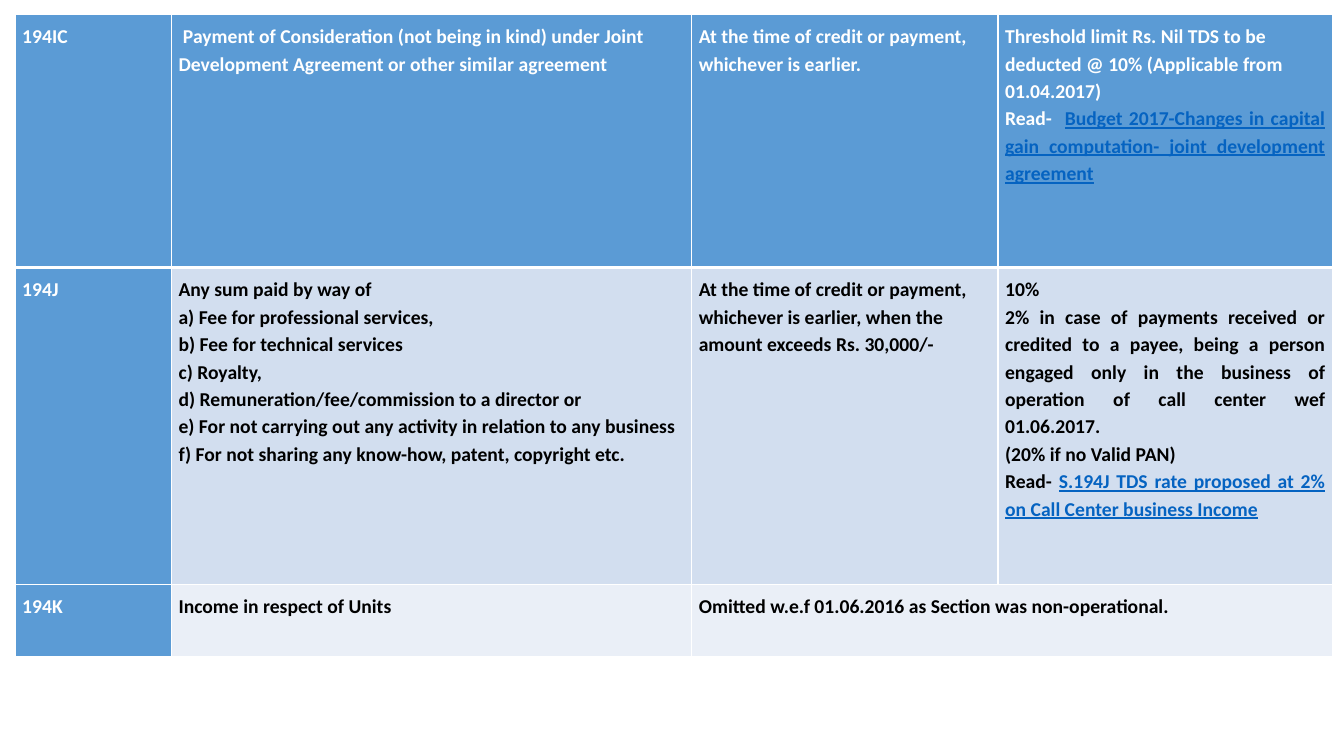
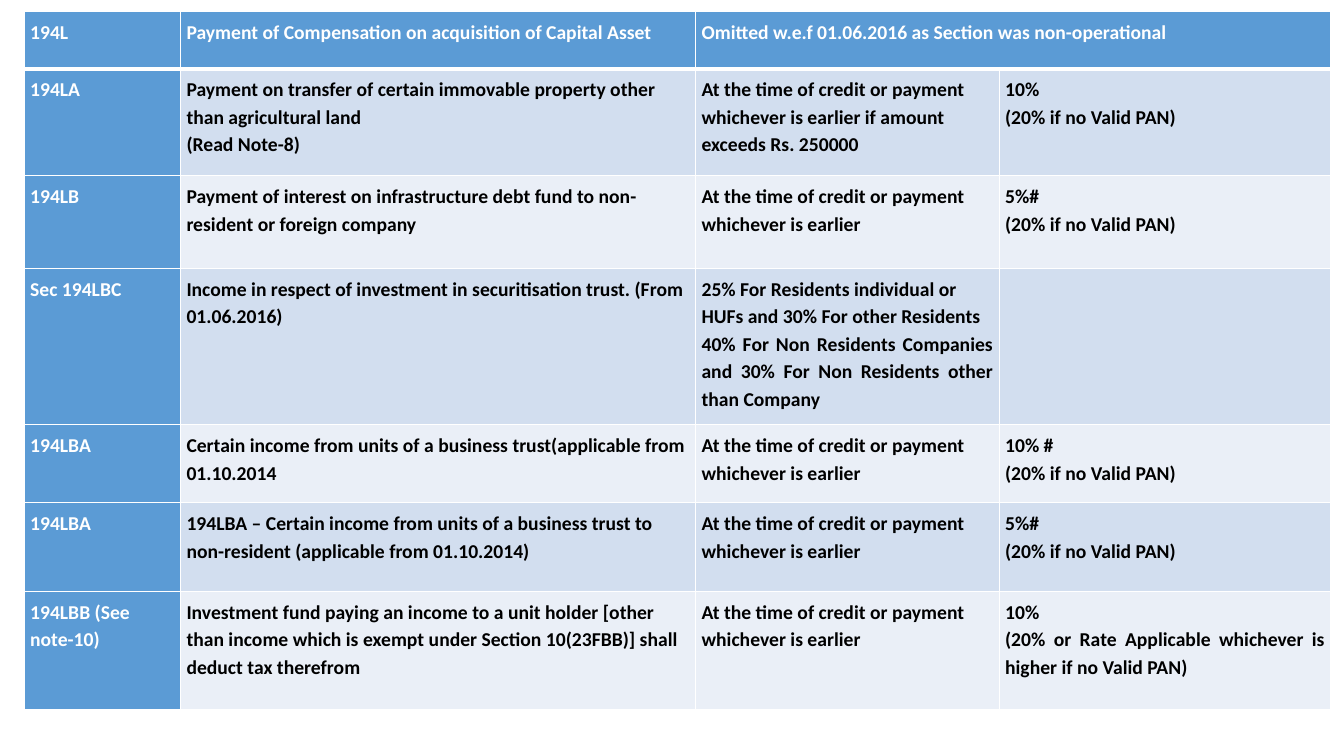
from dataclasses import dataclass

from lxml import etree
from pptx import Presentation
from pptx.dml.color import RGBColor
from pptx.enum.text import PP_ALIGN
from pptx.oxml.ns import qn
from pptx.util import Cm, Pt

LEFT, JUSTIFY = PP_ALIGN.LEFT, PP_ALIGN.JUSTIFY
BLANK_LAYOUT = 6


@dataclass(frozen=True)
class Theme:
    font: str = "Calibri"
    size: int = 14
    line_spacing: float = 1.15
    accent: str = "5B9BD5"
    bands: tuple = ("EAEFF7", "D2DEEF")
    rule: str = "FFFFFF"
    rule_width: int = 1
    header_rule_width: int = 3
    on_accent: str = "FFFFFF"
    ink: str = "000000"
    link: str = "0563C1"


class Deck:
    def __init__(self, theme):
        self.theme = theme
        self.presentation = Presentation()
        self.presentation.slide_width = Cm(33.87)
        self.presentation.slide_height = Cm(19.05)
        self.slide = None

    def add_slide(self):
        layout = self.presentation.slide_layouts[BLANK_LAYOUT]
        self.slide = self.presentation.slides.add_slide(layout)

    def add_sections(self, left, top, widths, heights, sections, margin):
        table = self.slide.shapes.add_table(
            len(heights), len(widths), Cm(left), Cm(top),
            Cm(sum(widths)), Cm(sum(heights))).table
        for column, width in zip(table.columns, widths):
            column.width = Cm(width)
        for row, height in zip(table.rows, heights):
            row.height = Cm(height)
        for row_no, section in enumerate(sections):
            for col_no in range(len(widths)):
                cell = table.cell(row_no, col_no)
                on_accent = row_no == 0 or col_no == 0
                self.style_cell(cell, row_no, on_accent, margin)
                if col_no < len(section):
                    self.write_cell(cell, section[col_no], on_accent)
            if len(section) < len(widths):
                table.cell(row_no, len(section) - 1).merge(
                    table.cell(row_no, len(widths) - 1))

    def style_cell(self, cell, row_no, on_accent, margin):
        theme = self.theme
        cell.margin_left = cell.margin_right = Cm(margin)
        cell.margin_top = cell.margin_bottom = Cm(margin)
        thick_side = {0: "lnB", 1: "lnT"}.get(row_no)
        properties = cell._tc.get_or_add_tcPr()
        for side in ("lnL", "lnR", "lnT", "lnB"):
            width = theme.header_rule_width if side == thick_side else theme.rule_width
            border = etree.SubElement(properties, qn(f"a:{side}"), w=str(Pt(width)))
            solid = etree.SubElement(border, qn("a:solidFill"))
            etree.SubElement(solid, qn("a:srgbClr"), val=theme.rule)
        cell.fill.solid()
        fill = theme.accent if on_accent else theme.bands[row_no % 2]
        cell.fill.fore_color.rgb = RGBColor.from_string(fill)

    def write_cell(self, cell, lines, on_accent):
        theme = self.theme
        lines = [lines] if isinstance(lines, str) else lines
        for line_no, line in enumerate(lines):
            lead, *links = [line] if isinstance(line, str) else line
            frame = cell.text_frame
            paragraph = frame.add_paragraph() if line_no else frame.paragraphs[0]
            paragraph.text = lead
            paragraph.alignment = JUSTIFY if line_no else LEFT
            paragraph.line_spacing = theme.line_spacing
            for run in paragraph.runs:
                self.format_run(run, theme.on_accent if on_accent else theme.ink)
            for link in links:
                run = paragraph.add_run()
                run.text = link
                self.format_run(run, theme.link)
                run.font.underline = True

    def format_run(self, run, color):
        run.font.name = self.theme.font
        run.font.size = Pt(self.theme.size)
        run.font.bold = True
        run.font.color.rgb = RGBColor.from_string(color)


NO_PAN = "(20% if no Valid PAN)"
ON_CREDIT = "At the time of credit or payment whichever is earlier"

PROFESSIONAL_SECTIONS = [
    ("194IC",
     " Payment of Consideration (not being in kind) under Joint Development "
     "Agreement or other similar agreement",
     "At the time of credit or payment, whichever is earlier.",
     ["Threshold limit Rs. Nil TDS to be deducted @ 10% (Applicable from 01.04.2017)",
      ("Read-  ", "Budget 2017-Changes in capital gain computation- "
       "joint development agreement")]),
    ("194J",
     ["Any sum paid by way of",
      "a) Fee for professional services,",
      "b) Fee for technical services",
      "c) Royalty,",
      "d) Remuneration/fee/commission to a director or",
      "e) For not carrying out any activity in relation to any business",
      "f) For not sharing any know-how, patent, copyright etc."],
     "At the time of credit or payment, whichever is earlier, when the amount "
     "exceeds Rs. 30,000/-",
     ["10%",
      "2% in case of payments received or credited to a payee, being a person "
      "engaged only in the business of operation of call center wef 01.06.2017.",
      NO_PAN,
      ("Read- ", "S.194J TDS rate proposed at 2% on Call Center business Income")]),
    ("194K", "Income in respect of Units",
     "Omitted w.e.f 01.06.2016 as Section was non-operational."),
]

CAPITAL_SECTIONS = [
    ("194L", "Payment of Compensation on acquisition of Capital Asset",
     "Omitted w.e.f 01.06.2016 as Section was non-operational"),
    ("194LA",
     ["Payment on transfer of certain immovable property other than agricultural land",
      "(Read Note-8)"],
     f"{ON_CREDIT} if amount exceeds Rs. 250000", ["10%", NO_PAN]),
    ("194LB",
     "Payment of interest on infrastructure debt fund to non-resident or foreign company",
     ON_CREDIT, ["5%#", NO_PAN]),
    ("Sec 194LBC",
     "Income in respect of investment in securitisation trust. (From 01.06.2016)",
     ["25% For Residents individual or HUFs and 30% For other Residents",
      "40% For Non Residents Companies and 30% For Non Residents other than Company"],
     []),
    ("194LBA",
     "Certain income from units of a business trust(applicable from 01.10.2014",
     ON_CREDIT, ["10% #", NO_PAN]),
    ("194LBA",
     "194LBA – Certain income from units of a business trust to non-resident "
     "(applicable from 01.10.2014)",
     ON_CREDIT, ["5%#", NO_PAN]),
    ("194LBB (See note-10)",
     "Investment fund paying an income to a unit holder [other than income which "
     "is exempt under Section 10(23FBB)] shall deduct tax therefrom",
     ON_CREDIT,
     ["10%", "(20% or Rate Applicable whichever is higher if no Valid PAN)"]),
]


def main():
    deck = Deck(Theme())
    deck.add_slide()
    deck.add_sections(0.38, 0.36, (3.94, 13.11, 7.72, 8.43), (6.38, 7.98, 1.83),
                      PROFESSIONAL_SECTIONS, margin=0.18)
    deck.add_slide()
    deck.add_sections(0.61, 0.28, (3.94, 12.98, 7.65, 8.36),
                      (1.45, 2.69, 2.34, 3.94, 1.96, 2.24, 2.97),
                      CAPITAL_SECTIONS, margin=0.15)
    deck.presentation.save("out.pptx")


if __name__ == "__main__":
    main()
